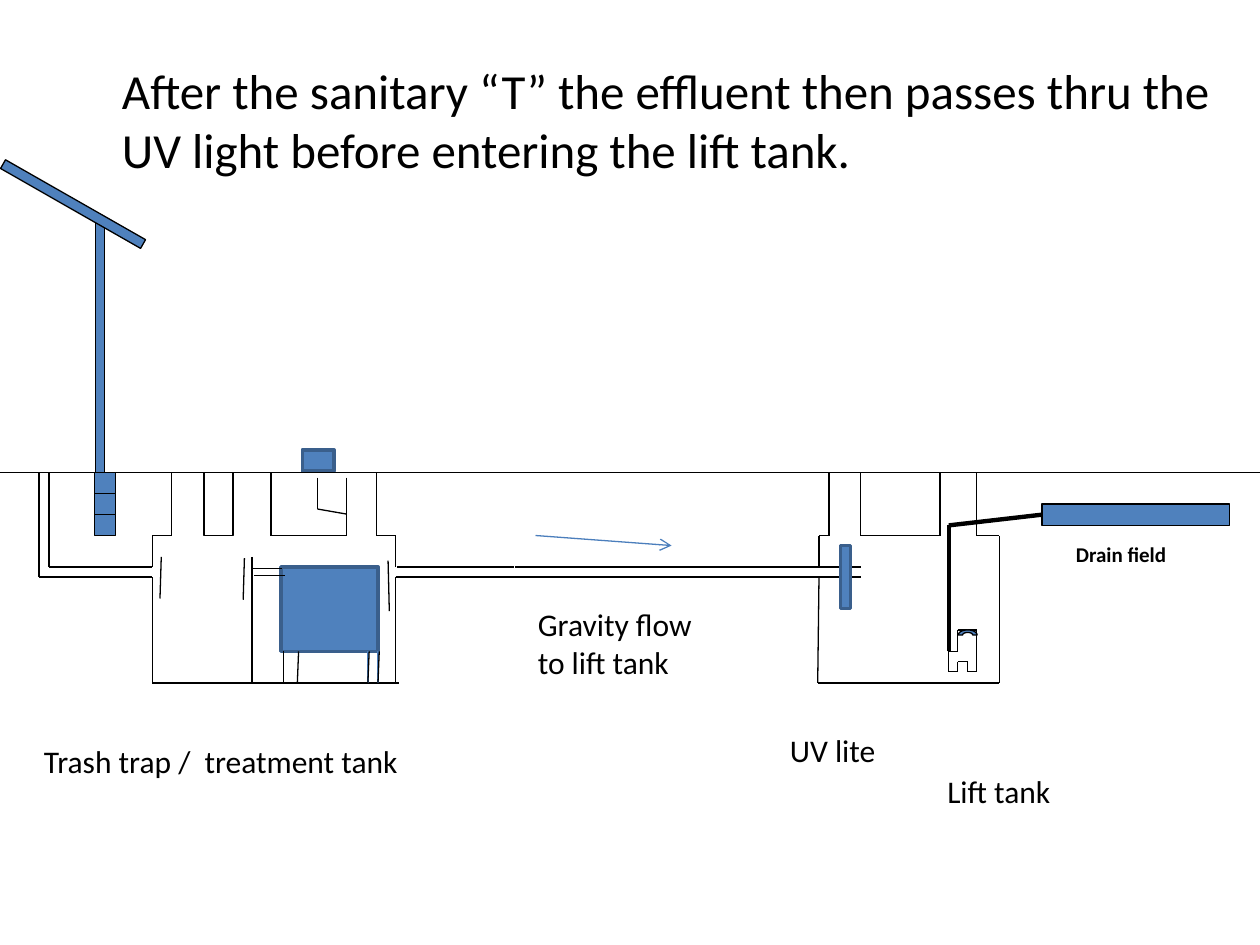
import math
from dataclasses import dataclass

from pptx import Presentation
from pptx import util as u
from pptx.dml import color
from pptx.enum import shapes, text
from pptx.oxml import ns, xmlchemy

BLACK, BLUE, EDGE, ACCENT = "000000", "4F81BD", "3A5F8C", "4B7EBC"
GROUND, PIPE_TOP, PIPE_BOTTOM, SHOULDER, FLOOR = 3.75, 4.5, 4.58, 4.25, 5.42


@dataclass
class Block:
    left: float
    top: float
    width: float
    height: float
    fill: str | None = BLUE
    edge: str = BLACK
    weight: float = 0.75
    rotation: float = 0


@dataclass
class Run:
    points: list[tuple[float, float]]
    colour: str = BLACK
    weight: float = 0.75


@dataclass
class Label:
    left: float
    top: float
    width: float
    height: float
    lines: tuple[str, ...]
    size: float = 18
    wrap: bool = False
    bold: bool = False


CONTROL_BOXES = [
    Block(0.75, GROUND + i * 0.5 / 3, 0.17, 0.5 / 3) for i in range(3)
]
BLOCKS = [
    Block(1.62, GROUND, 0.23, 0.5, fill=None),
    *CONTROL_BOXES,
    Block(0.76, 1.75, 0.07, 2),
    Block(-0.06, 1.58, 1.28, 0.08, rotation=29.7),
    Block(2.23, PIPE_TOP, 0.77, 0.67, edge=EDGE, weight=2),
    Block(2.4, 3.57, 0.25, 0.17, edge=EDGE, weight=2),
]
DRAIN_FIELD = Block(8.27, 4, 1.49, 0.17)
UV_LIGHT = Block(6.67, 4.33, 0.08, 0.5, edge=EDGE, weight=2)

GROUND_LINE = [Run([(0, GROUND), (10, GROUND)])]
INLET = [
    Run([(0.39, GROUND), (0.39, PIPE_TOP), (1.21, PIPE_TOP)]),
    Run([(0.31, GROUND), (0.31, PIPE_BOTTOM), (1.21, PIPE_BOTTOM)]),
]
TREATMENT_TANK = [
    Run([(1.21, PIPE_TOP), (1.21, SHOULDER), (1.36, SHOULDER), (1.36, GROUND)]),
    Run([(1.21, PIPE_BOTTOM), (1.21, FLOOR), (3.17, FLOOR)]),
    Run([(3.14, PIPE_TOP), (3.14, SHOULDER), (2.99, SHOULDER), (2.99, GROUND)]),
    Run([(3.14, PIPE_BOTTOM), (3.14, FLOOR)]),
    Run([(2, 4.42), (2, FLOOR)]),
    Run([(2, 4.51), (2.24, 4.51)]),
    Run([(2.02, 4.57), (2.26, 4.57)]),
    Run([(1.28, 4.42), (1.27, 4.75)]),
    Run([(1.94, 4.43), (1.93, 4.76)]),
    Run([(3.08, 4.45), (3.09, 4.85)]),
    Run([(2.75, 3.79), (2.75, SHOULDER), (2.15, SHOULDER), (2.15, GROUND)]),
    Run([(2.52, 3.79), (2.52, 4.04), (2.75, 4.08)]),
]
TANK_LEGS = [
    *[Run([(x, FLOOR), (x, 5.17)], ACCENT) for x in (2.92, 3)],
    Run([(2.25, 5.17), (2.25, FLOOR)]),
    *[Run([(x, 5.17), (x - 0.01, FLOOR)]) for x in (2.37, 2.93, 3.01)],
]
GRAVITY_PIPE = [
    Run([(3.15, PIPE_TOP), (4.08, PIPE_TOP)]),
    Run([(4.09, PIPE_TOP), (6.5, PIPE_TOP), (6.67, PIPE_TOP), (6.67, 4.33)]),
    Run([(3.14, PIPE_BOTTOM), (4.08, PIPE_BOTTOM), (6.5, PIPE_BOTTOM),
         (6.67, PIPE_BOTTOM), (6.67, 4.83), (6.75, 4.83),
         (6.75, PIPE_BOTTOM), (6.83, PIPE_BOTTOM)]),
    Run([(6.83, PIPE_TOP), (6.75, PIPE_TOP), (6.75, 4.33)]),
]
LIFT_TANK = [
    Run([(6.5, PIPE_TOP), (6.5, SHOULDER), (6.58, SHOULDER), (6.58, GROUND)]),
    Run([(6.5, PIPE_BOTTOM), (6.49, FLOOR), (7.93, FLOOR), (7.93, SHOULDER),
         (7.75, SHOULDER), (7.75, GROUND)]),
    Run([(7.46, GROUND), (7.46, SHOULDER), (6.83, SHOULDER), (6.83, GROUND)]),
]
PUMP = [
    Run([(7.68, 5), (7.75, 5), (7.75, 5.33), (7.68, 5.33), (7.68, 5.25),
         (7.6, 5.25), (7.6, 5.33), (7.53, 5.33), (7.53, 5.17), (7.6, 5.17),
         (7.6, 5), (7.75, 5)]),
]
RISER = Run([(7.53, 5.17), (7.53, 4.17), (8.27, 4.08)], weight=2.5)
FLOW_ARROW = Run([(4.25, 4.25), (5.33, 4.33)], ACCENT)

LABELS = [
    Label(0.87, 0.43, 8.83, 1.38,
          ("After the sanitary “T” the effluent then passes thru the "
           "UV light before entering the lift tank.",), 28, wrap=True),
    Label(0.25, 5.84, 3.65, 0.4, ("Trash trap /  treatment tank",), wrap=True),
    Label(4.17, 4.75, 1.49, 0.71, ("Gravity flow", "to lift tank")),
    Label(6.17, 5.75, 0.89, 0.4, ("UV lite",)),
    Label(7.42, 6.08, 1.04, 0.4, ("Lift tank",)),
    Label(8.44, 4.25, 1.32, 0.3, ("Drain field",), 12, wrap=True, bold=True),
]


def apply(target, values: dict) -> None:
    for name, value in values.items():
        setattr(target, name, value)


def paint(fill, colour: str | None) -> None:
    if colour is None:
        fill.background()
        return
    fill.solid()
    fill.fore_color.rgb = color.RGBColor.from_string(colour)


def finish(shape, fill: str | None, edge: str, weight: float) -> None:
    shape.shadow.inherit = False
    paint(shape.fill, fill)
    paint(shape.line.fill, edge)
    shape.line.width = u.Pt(weight)


def draw_block(page, block: Block):
    frame = map(u.Inches, (block.left, block.top, block.width, block.height))
    shape = page.shapes.add_shape(shapes.MSO_SHAPE.RECTANGLE, *frame)
    shape.rotation = block.rotation
    finish(shape, block.fill, block.edge, block.weight)
    return shape


def draw_run(page, run: Run):
    for start, end in zip(run.points, run.points[1:]):
        line = page.shapes.add_connector(
            shapes.MSO_CONNECTOR.STRAIGHT, *map(u.Inches, start + end))
        paint(line.line.fill, run.colour)
        line.line.width = u.Pt(run.weight)
        properties = line._element.spPr
        properties.append(xmlchemy.OxmlElement("a:effectLst"))
    return line


def add_arrowhead(line) -> None:
    head = xmlchemy.OxmlElement("a:tailEnd")
    head.set("type", "arrow")
    line._element.spPr.find(ns.qn("a:ln")).append(head)


def draw_pump_cap(page) -> None:
    def arc(radius_x: float, radius_y: float) -> list[tuple[int, int]]:
        angles = [math.pi * step / 12 for step in range(13)]
        return [(u.Inches(7.68 - radius_x * math.cos(angle)),
                 u.Inches(5.04 - radius_y * math.sin(angle)))
                for angle in angles]

    outline = arc(0.075, 0.04) + arc(0.04, 0.02)[::-1]
    builder = page.shapes.build_freeform(*outline[0])
    builder.add_line_segments(outline[1:], close=True)
    finish(builder.convert_to_shape(), BLUE, BLACK, 0.75)


def draw_label(page, label: Label) -> None:
    frame = map(u.Inches, (label.left, label.top, label.width, label.height))
    box = page.shapes.add_textbox(*frame).text_frame
    apply(box, {"word_wrap": label.wrap,
                "auto_size": text.MSO_AUTO_SIZE.SHAPE_TO_FIT_TEXT})
    for index, line in enumerate(label.lines):
        para = box.add_paragraph() if index else box.paragraphs[0]
        span = para.add_run()
        span.text = line
        apply(span.font, {"name": "Calibri", "size": u.Pt(label.size),
                          "bold": label.bold})
        paint(span.font.fill, BLACK)


def main() -> None:
    deck = Presentation()
    apply(deck, {"slide_width": u.Inches(10), "slide_height": u.Inches(7.5)})
    page = deck.slides.add_slide(deck.slide_layouts[6])
    for block in BLOCKS:
        draw_block(page, block)
    for run in (GROUND_LINE + INLET + TREATMENT_TANK + TANK_LEGS
                + GRAVITY_PIPE + LIFT_TANK + PUMP):
        draw_run(page, run)
    draw_pump_cap(page)
    drain_field = draw_block(page, DRAIN_FIELD)
    draw_run(page, RISER).end_connect(drain_field, 1)
    add_arrowhead(draw_run(page, FLOW_ARROW))
    draw_block(page, UV_LIGHT)
    for label in LABELS:
        draw_label(page, label)
    deck.save("out.pptx")


if __name__ == "__main__":
    main()
